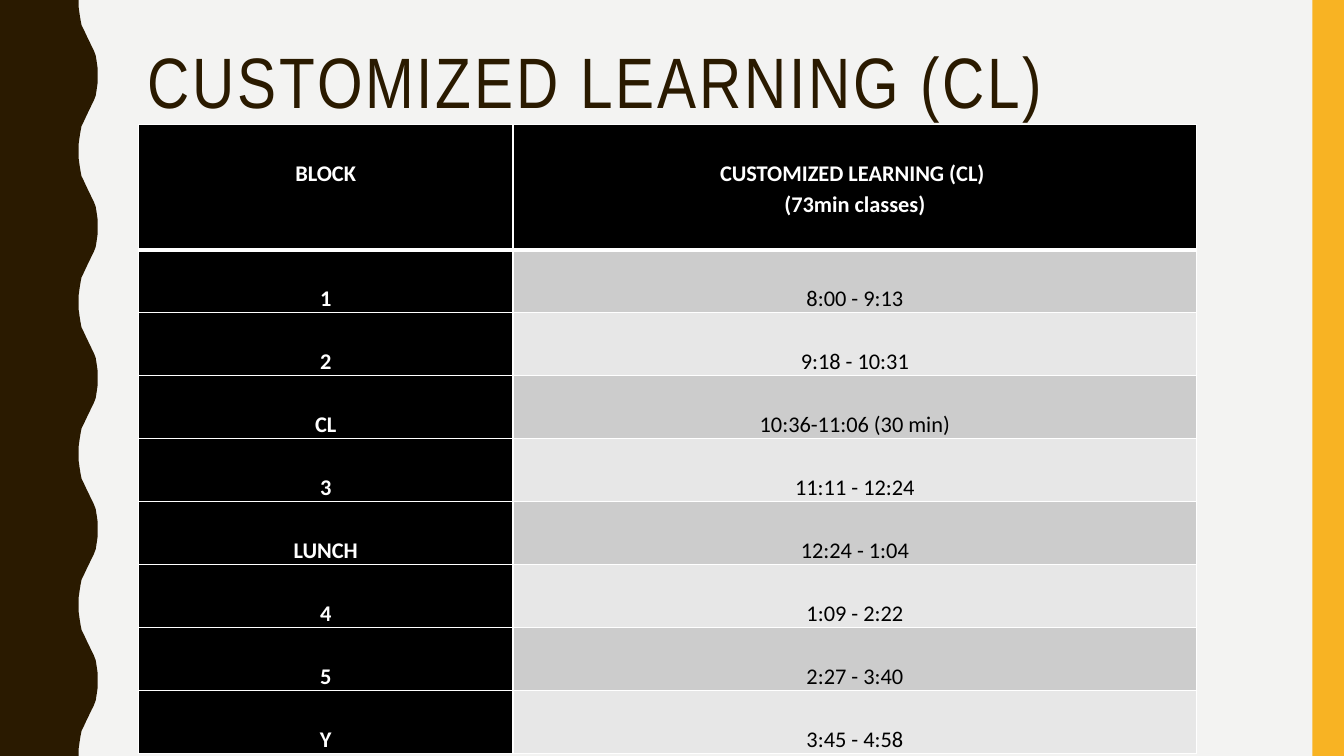
"""Build the Customized Learning (CL) bell schedule slide."""
from lxml import etree
from pptx import Presentation
from pptx import util as u
from pptx.dml.color import RGBColor
from pptx.enum import shapes, text
from pptx.oxml import ns

TITLE = "CUSTOMIZED LEARNING (CL)"
HEADER = ("BLOCK", "CUSTOMIZED LEARNING (CL) \n(73min classes)")
SCHEDULE = [
    ("1", "8:00 - 9:13"),
    ("2", "9:18 - 10:31"),
    ("CL", "10:36-11:06 (30 min)"),
    ("3", "11:11 - 12:24"),
    ("LUNCH", "12:24 - 1:04"),
    ("4", "1:09 - 2:22"),
    ("5", "2:27 - 3:40"),
    ("Y", "3:45 - 4:58"),
]

BROWN = RGBColor(0x2A, 0x1A, 0x00)
GOLD = RGBColor(0xF8, 0xB3, 0x23)
PAPER = RGBColor(0xF3, 0xF3, 0xF2)
BLACK = RGBColor(0x00, 0x00, 0x00)
WHITE = RGBColor(0xFF, 0xFF, 0xFF)
BANDS = (RGBColor(0xCC, 0xCC, 0xCC), RGBColor(0xE7, 0xE7, 0xE7))

WIDTH, HEIGHT = 960, 540
WAVE_LENGTH, WAVE_COUNT = 108, 5
HALF_WAVE = [
    (56.2, 0), (56.2, 5), (56.9, 10), (57.6, 14.4), (58.3, 18),
    (59.8, 21), (61.2, 24), (62.6, 27), (64.1, 30), (65.5, 33),
    (67, 36), (68.4, 39.6), (69.1, 44), (69.8, 49), (69.8, 54),
]
BAR_WIDTH = 22.5
TITLE_BOX = (98.6, 30.2, 801.4, 117.4)
TABLE_LEFT, TABLE_TOP = 98.9, 88.9
COLUMN_WIDTHS = (267.5, 488.5)
HEADER_HEIGHT, ROW_HEIGHT = 89.5, 45
LINE_HEIGHT = 22.4
SIDE_MARGIN = 4.5

TITLE_FONT = {"name": "Arial Narrow", "size": u.Pt(51)}
CELL_FONT = {"name": "Calibri", "size": u.Pt(16)}


def set_values(target, values):
    for name, value in values.items():
        setattr(target, name, value)


def paint(shape, color):
    shape.shadow.inherit = False
    shape.fill.solid()
    shape.fill.fore_color.rgb = color
    shape.line.fill.background()


def add_wave(slide):
    mirrored = [(x, WAVE_LENGTH - y) for x, y in HALF_WAVE[-2::-1]]
    wave = (HALF_WAVE + mirrored)[1:]
    edge = [(x, y + WAVE_LENGTH * number)
            for number in range(WAVE_COUNT) for x, y in wave]
    outline = [HALF_WAVE[0], *edge, (0, HEIGHT)]
    builder = slide.shapes.build_freeform(0, 0)
    builder.add_line_segments([(u.Pt(x), u.Pt(y)) for x, y in outline], close=True)
    paint(builder.convert_to_shape(), BROWN)


def add_title(slide):
    box = slide.shapes.add_textbox(*map(u.Pt, TITLE_BOX))
    set_values(box.text_frame, {"word_wrap": True,
                                "vertical_anchor": text.MSO_ANCHOR.TOP})
    paragraph = box.text_frame.paragraphs[0]
    paragraph.line_spacing = 0.9
    run = paragraph.add_run()
    run.text = TITLE
    set_values(run.font, TITLE_FONT)
    run.font.color.rgb = BROWN
    run._r.get_or_add_rPr().set("spc", "200")


def add_borders(cell, widths):
    properties = cell._tc.get_or_add_tcPr()
    for side, width in widths.items():
        line = etree.SubElement(properties, ns.qn(f"a:ln{side}"), w=str(u.Pt(width)))
        fill = etree.SubElement(line, ns.qn("a:solidFill"))
        etree.SubElement(fill, ns.qn("a:srgbClr"), val=str(WHITE))


def fill_cell(cell, words, row, column):
    is_header = row == 0
    is_dark = is_header or column == 0
    add_borders(cell, {"L": 1, "R": 1, "T": 3 if row == 1 else 1,
                       "B": 3 if is_header else 1})
    cell.fill.solid()
    cell.fill.fore_color.rgb = BLACK if is_dark else BANDS[(row - 1) % 2]
    set_values(cell, {
        "margin_left": u.Pt(SIDE_MARGIN),
        "margin_right": u.Pt(SIDE_MARGIN),
        "margin_top": u.Pt(LINE_HEIGHT),
        "margin_bottom": u.Pt(LINE_HEIGHT if is_header else 0),
        "vertical_anchor": text.MSO_ANCHOR.TOP,
    })
    cell.text = words
    for paragraph in cell.text_frame.paragraphs:
        set_values(paragraph, {"alignment": text.PP_ALIGN.CENTER,
                               "line_spacing": 1.15})
        font = paragraph.runs[0].font
        set_values(font, {**CELL_FONT, "bold": is_dark})
        font.color.rgb = WHITE if is_dark else BLACK


def add_schedule(slide):
    rows = [HEADER, *SCHEDULE]
    heights = [HEADER_HEIGHT] + [ROW_HEIGHT] * len(SCHEDULE)
    frame = (TABLE_LEFT, TABLE_TOP, sum(COLUMN_WIDTHS), sum(heights))
    table = slide.shapes.add_table(
        len(rows), len(COLUMN_WIDTHS), *map(u.Pt, frame)).table
    for column, width in zip(table.columns, COLUMN_WIDTHS):
        column.width = u.Pt(width)
    for row, (entries, height) in enumerate(zip(rows, heights)):
        table.rows[row].height = u.Pt(height)
        for column, words in enumerate(entries):
            fill_cell(table.cell(row, column), words, row, column)


def main():
    presentation = Presentation()
    set_values(presentation, {"slide_width": u.Pt(WIDTH), "slide_height": u.Pt(HEIGHT)})
    slide = presentation.slides.add_slide(presentation.slide_layouts[6])
    slide.background.fill.solid()
    slide.background.fill.fore_color.rgb = PAPER
    add_wave(slide)
    bar = slide.shapes.add_shape(
        shapes.MSO_SHAPE.RECTANGLE,
        *map(u.Pt, (WIDTH - BAR_WIDTH, 0, BAR_WIDTH, HEIGHT)))
    paint(bar, GOLD)
    add_title(slide)
    add_schedule(slide)
    presentation.save("out.pptx")


if __name__ == "__main__":
    main()
